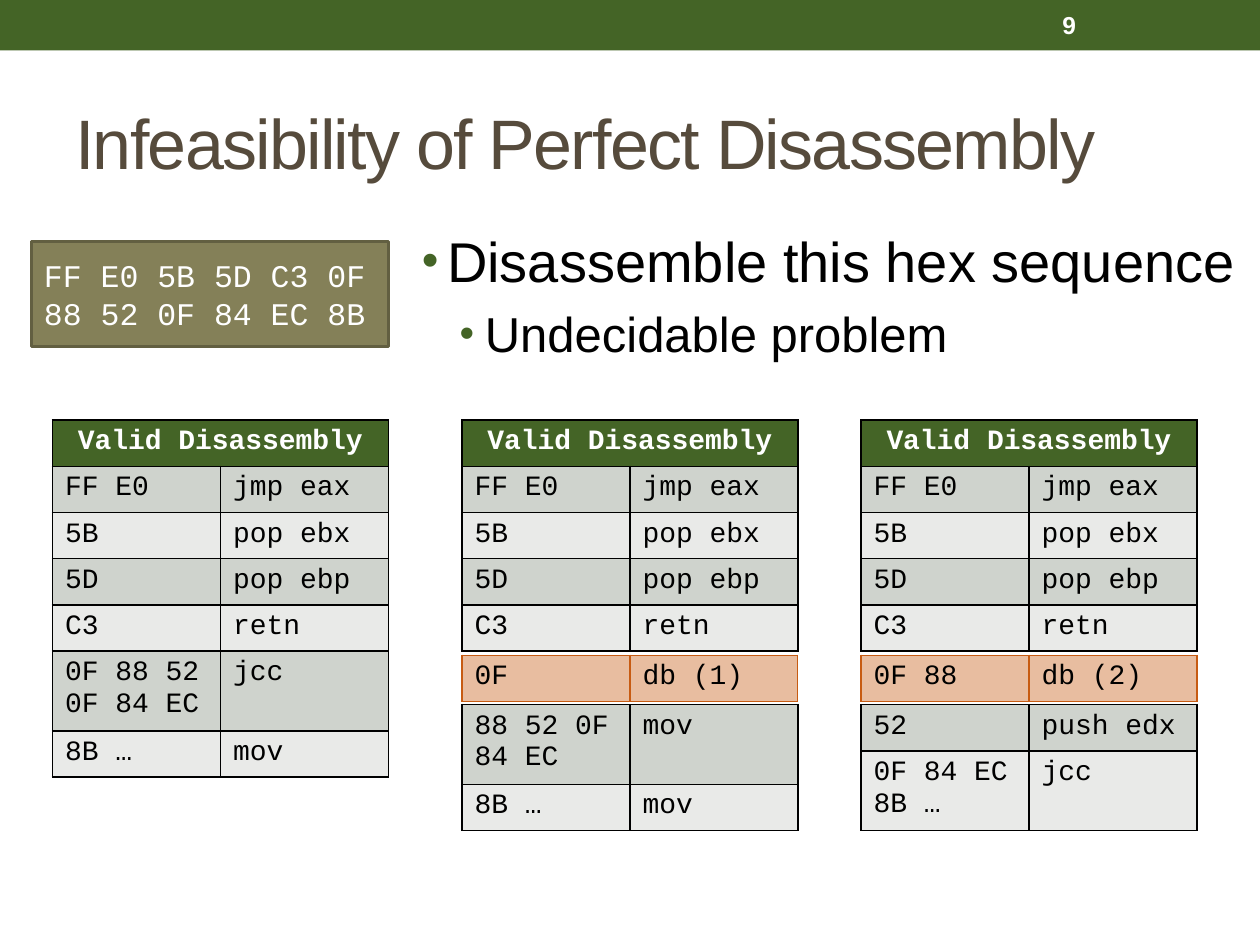
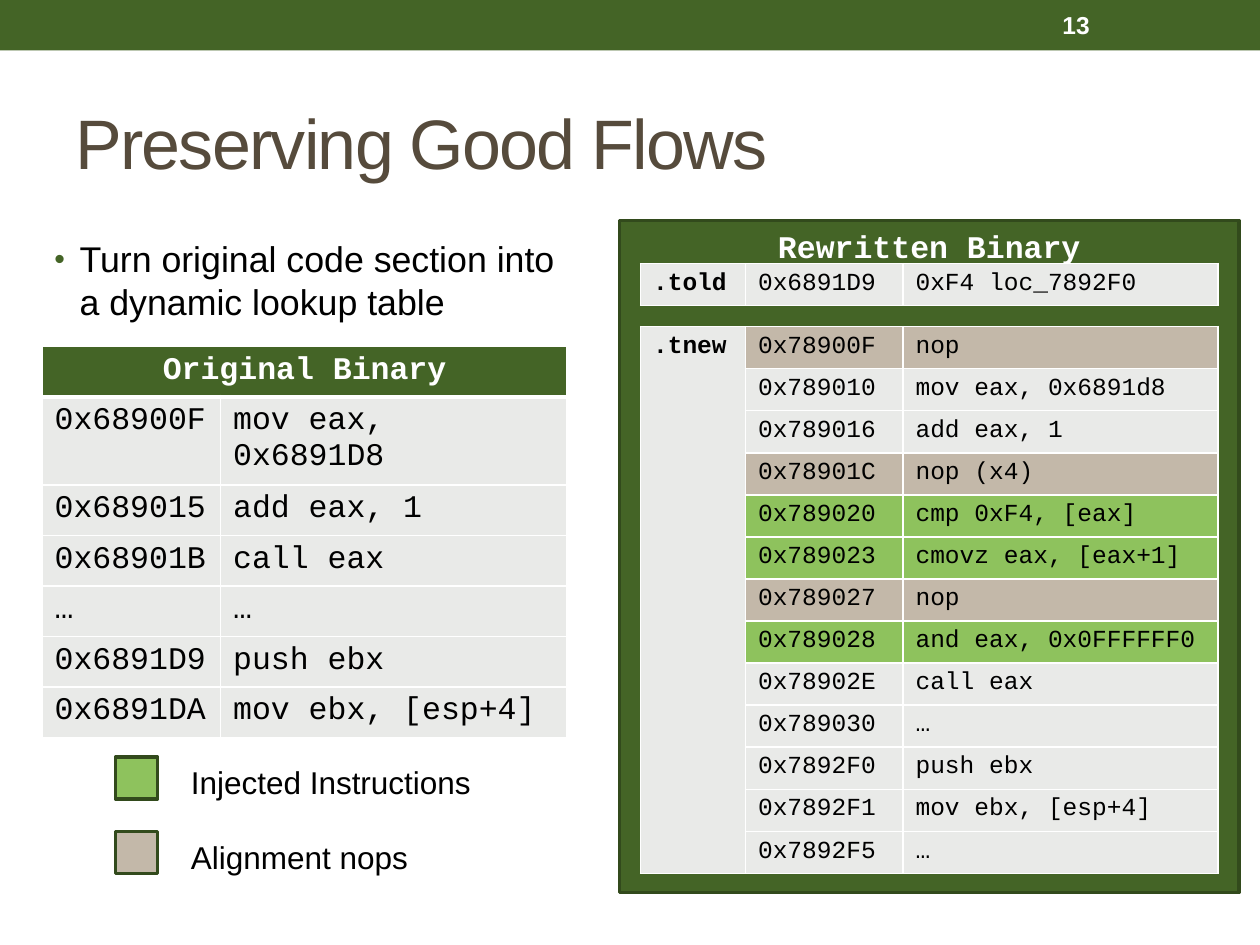
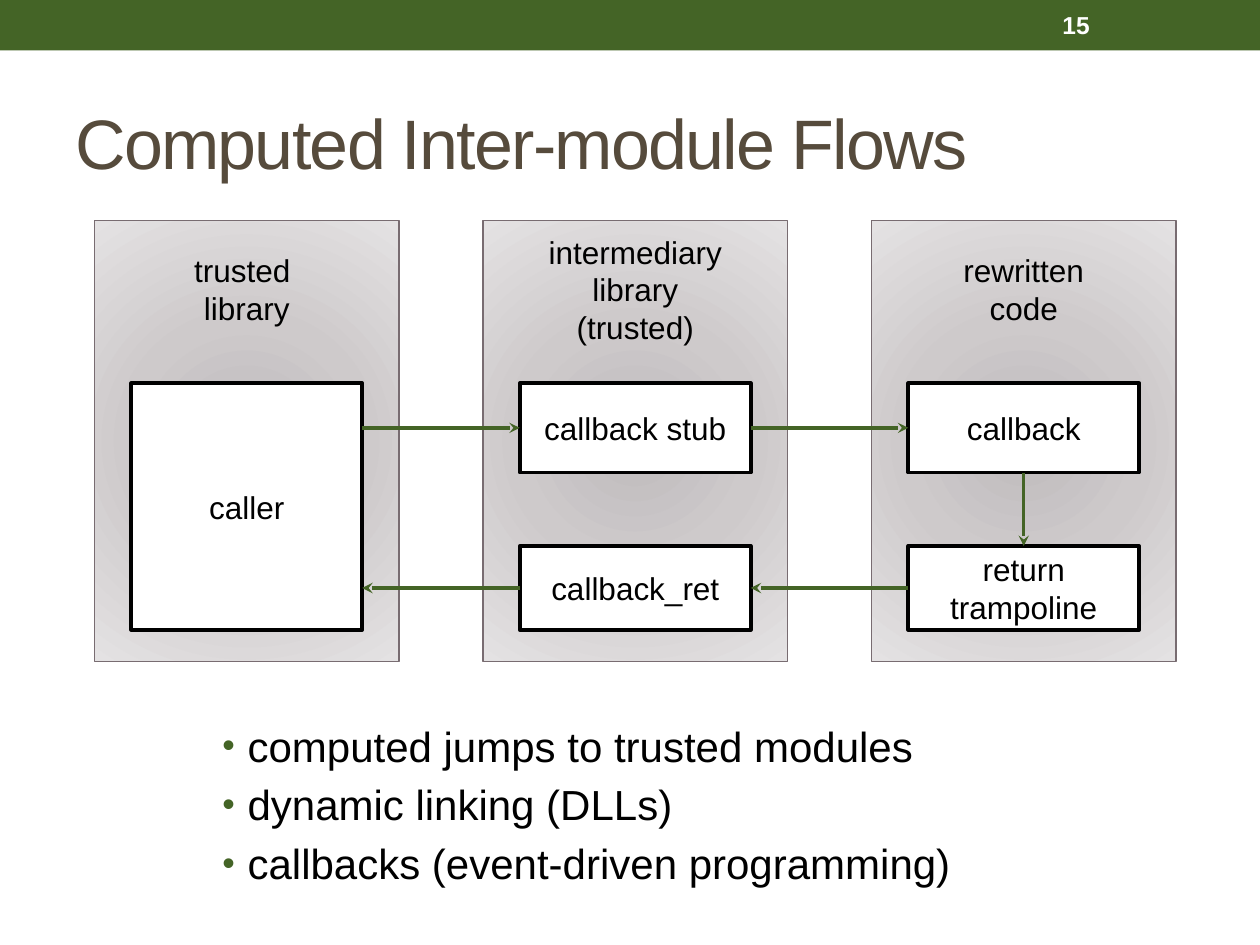
from dataclasses import dataclass

from lxml.etree import SubElement
from pptx import Presentation
from pptx.dml.color import RGBColor
from pptx.enum.shapes import MSO_CONNECTOR, MSO_SHAPE
from pptx.enum.text import MSO_ANCHOR, PP_ALIGN
from pptx.oxml import parse_xml
from pptx.oxml.ns import nsdecls, qn
from pptx.util import Inches, Pt


@dataclass(frozen=True)
class Theme:
    """Colours, fonts and type sizes shared by the slides."""

    green: str = "446426"
    dark_green: str = "324A1C"
    brown: str = "564B3C"
    olive: str = "848058"
    dark_olive: str = "625F41"
    orange: str = "C75B12"
    injected: str = "8EC25D"
    alignment: str = "C3B8A9"
    band_dark: str = "CFD3CD"
    band_light: str = "E9EAE8"
    panel_line: str = "786C71"
    panel_stops: tuple = ((0, "BEBABC"), (45, "CECACB"), (100, "E4E2E3"))
    white: str = "FFFFFF"
    black: str = "000000"
    sans: str = "Arial"
    mono: str = "Courier New"
    title_size: float = 40
    label_size: float = 18
    number_size: float = 14
    outline: float = 2.08
    thin: float = 0.75


@dataclass(frozen=True)
class TableStyle:
    """Type size, borders, row height and fill opacity of a table."""

    size: float
    border: str
    border_width: float = 1
    row_height: float = 3
    header_rule: float = 1
    opacity: int = 100


THEME = Theme()
DISASSEMBLY = TableStyle(16, THEME.black, row_height=3.1)
DATA_BYTE = TableStyle(16, THEME.orange, THEME.thin, 3.1, opacity=40)
ORIGINAL = TableStyle(18, THEME.white, row_height=4, header_rule=3)
REWRITTEN = TableStyle(14, THEME.white)


class Deck:
    """Draws elements on the current slide, on a grid of 120 columns by 90 rows."""

    def __init__(self, theme):
        """Start an empty presentation."""
        self.theme = theme
        self.presentation = Presentation()
        self.presentation.slide_width = Inches(10)
        self.presentation.slide_height = Inches(7.5)
        self.slide = None

    def across(self, columns):
        """Turn columns into a length."""
        return round(self.presentation.slide_width * columns / 120)

    def down(self, rows):
        """Turn rows into a length."""
        return round(self.presentation.slide_height * rows / 90)

    def place(self, column, row, width, height):
        """Turn a grid area into left, top, width and height."""
        return self.across(column), self.down(row), self.across(width), self.down(height)

    def new_slide(self, title, number):
        """Add a slide with its band, title and number."""
        theme = self.theme
        self.slide = self.presentation.slides.add_slide(self.presentation.slide_layouts[6])
        self.box((0, 0, 120, 4.8), theme.green)
        heading = self.text((6, 7, 108, 13), title, theme.title_size, theme.brown, anchor=MSO_ANCHOR.MIDDLE)
        heading.text_frame.paragraphs[0].runs[0].font._element.set("spc", "-100")
        self.text((100, 0.24, 14, 4.32), number, theme.number_size, theme.white, True, anchor=MSO_ANCHOR.MIDDLE)

    def style(self, paragraph, size, color, bold=False, font=None, align=PP_ALIGN.LEFT):
        """Set the font and alignment of a paragraph."""
        paragraph.alignment = align
        paragraph.font.name = font or self.theme.sans
        paragraph.font.size = Pt(size)
        paragraph.font.bold = bold
        paragraph.font.color.rgb = RGBColor.from_string(color)

    def fill_frame(self, frame, text, *style, anchor=MSO_ANCHOR.TOP):
        """Fill a text frame with one paragraph for each line."""
        frame.word_wrap = True
        frame.vertical_anchor = anchor
        frame.text = text
        for paragraph in frame.paragraphs:
            self.style(paragraph, *style)

    def text(self, area, text, size, color, bold=False, anchor=MSO_ANCHOR.TOP):
        """Add a text box."""
        shape = self.slide.shapes.add_textbox(*self.place(*area))
        self.fill_frame(shape.text_frame, text, size, color, bold, anchor=anchor)
        return shape

    def box(self, area, fill, line=None, width=None):
        """Add a rectangle."""
        shape = self.slide.shapes.add_shape(MSO_SHAPE.RECTANGLE, *self.place(*area))
        shape.shadow.inherit = False
        shape.fill.solid()
        shape.fill.fore_color.rgb = RGBColor.from_string(fill)
        if line:
            shape.line.color.rgb = RGBColor.from_string(line)
            shape.line.width = Pt(width or self.theme.outline)
        else:
            shape.line.fill.background()
        return shape

    def node(self, area, text):
        """Add a white box with a centred label."""
        theme = self.theme
        shape = self.box(area, theme.white, theme.black)
        self.fill_frame(shape.text_frame, text, theme.label_size, theme.black, False, theme.sans,
                        PP_ALIGN.CENTER, anchor=MSO_ANCHOR.MIDDLE)
        return shape

    def module_panel(self, area, text):
        """Add a panel with a radial gradient and a label near its top."""
        theme = self.theme
        shape = self.box(area, theme.white, theme.panel_line, theme.thin)
        stops = "".join(f'<a:gs pos="{position * 1000}"><a:srgbClr val="{color}"/></a:gs>'
                        for position, color in theme.panel_stops)
        gradient = parse_xml(
            f'<a:gradFill {nsdecls("a")} rotWithShape="1"><a:gsLst>{stops}</a:gsLst><a:path path="circle">'
            '<a:fillToRect l="100000" t="100000" r="100000" b="100000"/></a:path></a:gradFill>')
        properties = shape._element.spPr
        properties.replace(properties.find(qn("a:solidFill")), gradient)
        shape.text_frame.margin_bottom = self.down(29.5)
        self.fill_frame(shape.text_frame, text, theme.label_size, theme.black, False, theme.sans,
                        PP_ALIGN.CENTER, anchor=MSO_ANCHOR.MIDDLE)

    def bullets(self, area, items):
        """Add bulleted lines given as text, size and level."""
        frame = self.slide.shapes.add_textbox(*self.place(*area)).text_frame
        self.fill_frame(frame, "\n".join(text for text, _, _ in items), self.theme.label_size, self.theme.black)
        for paragraph, (_, size, level) in zip(frame.paragraphs, items):
            paragraph.font.size = Pt(size)
            paragraph.level = level
            paragraph.space_before = Pt(0.2 * size)
            properties = paragraph._p.get_or_add_pPr()
            properties.set("marL", str(Inches(0.2 + 0.3 * level)))
            properties.set("indent", str(Inches(-0.2)))
            definition = parse_xml(
                f'<a:pPr {nsdecls("a")}><a:buClr><a:srgbClr val="{self.theme.green}"/></a:buClr>'
                '<a:buSzPct val="85000"/><a:buFont typeface="Arial"/><a:buChar char="•"/></a:pPr>')
            position = properties.index(properties.find(qn("a:spcBef"))) + 1
            properties[position:position] = list(definition)

    def arrow(self, start, end, source=None, target=None):
        """Add an arrow, joined to a (shape, side) pair where one is given."""
        connector = self.slide.shapes.add_connector(
            MSO_CONNECTOR.STRAIGHT, self.across(start[0]), self.down(start[1]),
            self.across(end[0]), self.down(end[1]))
        if source:
            connector.begin_connect(*source)
        if target:
            connector.end_connect(*target)
        connector.line.color.rgb = RGBColor.from_string(self.theme.green)
        connector.line.width = Pt(2)
        SubElement(connector.line._get_or_add_ln(), qn("a:tailEnd"), type="stealth")
        SubElement(connector._element.spPr, qn("a:effectLst"))

    def cell(self, cell, text, fill, style, color=None, bold=False, align=PP_ALIGN.LEFT, rule=None):
        """Label, fill and frame one table cell."""
        cell.text = text
        for paragraph in cell.text_frame.paragraphs:
            self.style(paragraph, style.size, color or self.theme.black, bold, self.theme.mono, align)
        cell.fill.solid()
        cell.fill.fore_color.rgb = RGBColor.from_string(fill)
        properties = cell._tc.get_or_add_tcPr()
        if style.opacity < 100:
            SubElement(properties.find(f".//{qn('a:srgbClr')}"), qn("a:alpha"), val=str(style.opacity * 1000))
        for position, side in enumerate("LRTB"):
            width = rule if rule and side == "B" else style.border_width
            properties.insert(position, parse_xml(
                f'<a:ln{side} {nsdecls("a")} w="{Pt(width)}"><a:solidFill>'
                f'<a:srgbClr val="{style.border}"/></a:solidFill></a:ln{side}>'))

    def table(self, area, widths, rows, fills, style, header=None, label=None):
        """Add a table with an optional header across the top or label down the left."""
        theme = self.theme
        top, left = int(header is not None), int(label is not None)
        column, row, height = area
        frame = self.slide.shapes.add_table(
            len(rows) + top, len(widths), *self.place(column, row, sum(widths), height))
        table = frame.table
        table.first_row = table.horz_banding = False
        for table_column, width in zip(table.columns, widths):
            table_column.width = self.across(width)
        for table_row in table.rows:
            table_row.height = self.down(style.row_height)
        frame.height = self.down(height)
        if header:
            for index in range(len(widths)):
                self.cell(table.cell(0, index), "" if index else header, theme.green, style, theme.white,
                          True, PP_ALIGN.CENTER, style.header_rule)
            table.cell(0, 0).merge(table.cell(0, len(widths) - 1))
        for row_index, (values, fill) in enumerate(zip(rows, fills), top):
            for column_index, value in enumerate(values, left):
                self.cell(table.cell(row_index, column_index), value, fill, style)
            if label:
                self.cell(table.cell(row_index, 0), "" if row_index else label, theme.band_light, style, bold=True)
        if label and len(rows) > 1:
            table.cell(0, 0).merge(table.cell(len(rows) - 1, 0))


def build_disassembly(deck):
    """Build the slide with three valid disassemblies."""
    theme = deck.theme
    deck.new_slide("Infeasibility of Perfect Disassembly", "9")
    deck.bullets((39, 21, 80, 16), [("Disassemble this hex sequence", 32, 0), ("Undecidable problem", 28, 1)])
    code = deck.box((3, 23, 34, 10), theme.olive, theme.dark_olive)
    deck.fill_frame(code.text_frame, "FF E0 5B 5D C3 0F 88 52 0F 84 EC 8B", theme.label_size, theme.white,
                    False, theme.mono, anchor=MSO_ANCHOR.MIDDLE)
    widths = (16, 16)
    bands = (theme.band_dark, theme.band_light) * 3
    common = [("FF E0", "jmp eax"), ("5B", "pop ebx"), ("5D", "pop ebp"), ("C3", "retn")]
    header = "Valid Disassembly"
    first = common + [("0F 88 52 0F 84 EC", "jcc"), ("8B …", "mov")]
    deck.table((5, 40, 34), widths, first, bands, DISASSEMBLY, header)
    variants = [
        (44, ("0F", "db (1)"), [("88 52 0F 84 EC", "mov"), ("8B …", "mov")]),
        (82, ("0F 88", "db (2)"), [("52", "push edx"), ("0F 84 EC\n8B …", "jcc")]),
    ]
    for column, data_byte, remainder in variants:
        deck.table((column, 40, 22), widths, common, bands, DISASSEMBLY, header)
        deck.table((column, 62.4, 4.4), widths, [data_byte], [theme.orange], DATA_BYTE)
        deck.table((column, 67.1, 12), widths, remainder, bands, DISASSEMBLY)


def build_good_flows(deck):
    """Build the slide that sets the original beside the rewritten binary."""
    theme = deck.theme
    deck.new_slide("Preserving Good Flows", "13")
    panel = deck.box((59, 21, 59, 64), theme.green, theme.dark_green)
    deck.fill_frame(panel.text_frame, "Rewritten Binary", theme.label_size, theme.white, True, theme.mono,
                    PP_ALIGN.CENTER)
    deck.bullets((4, 22, 50, 8), [("Turn original code section into a dynamic lookup table", 20.4, 0)])
    plain, injected, padding = theme.band_light, theme.injected, theme.alignment
    original = [
        ("0x68900F", "mov eax, 0x6891D8"), ("0x689015", "add eax, 1"), ("0x68901B", "call eax"),
        ("…", "…"), ("0x6891D9", "push ebx"), ("0x6891DA", "mov ebx, [esp+4]"),
    ]
    deck.table((4, 33, 33.6), (17, 33), original, [plain] * 6, ORIGINAL, "Original Binary")
    widths = (10, 15, 30)
    deck.table((61, 25.1, 4), widths, [("0x6891D9", "0xF4 loc_7892F0")], [plain], REWRITTEN, label=".told")
    rewritten = [
        ("0x78900F", "nop", padding),
        ("0x789010", "mov eax, 0x6891d8", plain),
        ("0x789016", "add eax, 1", plain),
        ("0x78901C", "nop (x4)", padding),
        ("0x789020", "cmp 0xF4, [eax]", injected),
        ("0x789023", "cmovz eax, [eax+1]", injected),
        ("0x789027", "nop", padding),
        ("0x789028", "and eax, 0x0FFFFFF0", injected),
        ("0x78902E", "call eax", plain),
        ("0x789030", "…", plain),
        ("0x7892F0", "push ebx", plain),
        ("0x7892F1", "mov ebx, [esp+4]", plain),
        ("0x7892F5", "…", plain),
    ]
    deck.table((61, 31.1, 52), widths, [entry[:2] for entry in rewritten], [entry[2] for entry in rewritten],
               REWRITTEN, label=".tnew")
    legend = [(72.1, "Injected Instructions", injected), (79.2, "Alignment nops", padding)]
    for row, meaning, color in legend:
        deck.box((11, row, 4, 4), color, theme.dark_green)
        deck.text((17, row, 37, 4.8), meaning, theme.label_size, theme.black)


def build_module_flows(deck):
    """Build the slide with the callback path between modules."""
    deck.new_slide("Computed Inter-module Flows", "15")
    bullets = ["computed jumps to trusted modules", "dynamic linking (DLLs)", "callbacks (event-driven programming)"]
    deck.bullets((20, 68, 94, 22), [(text, 24, 0) for text in bullets])
    modules = ["trusted \nlibrary", "intermediary\nlibrary\n(trusted)", "rewritten\ncode"]
    for index, module in enumerate(modules):
        deck.module_panel((9 + 37 * index, 21, 29, 42), module)
    width = 22
    left, middle, right = (12.5 + 37 * index for index in range(3))
    call_row, return_row = 40.75, 56
    deck.node((left, 36.5, width, 23.5), "caller")
    stub = deck.node((middle, 36.5, width, 8.5), "callback stub")
    callback_return = deck.node((middle, 52, width, 8), "callback_ret")
    callback = deck.node((right, 36.5, width, 8.5), "callback")
    trampoline = deck.node((right, 52, width, 8), "return trampoline")
    center = right + width / 2
    deck.arrow((left + width, call_row), (middle, call_row), target=(stub, 1))
    deck.arrow((middle + width, call_row), (right, call_row), (stub, 3), (callback, 1))
    deck.arrow((center, 45), (center, 52), (callback, 2), (trampoline, 0))
    deck.arrow((right, return_row), (middle + width, return_row), (trampoline, 1), (callback_return, 3))
    deck.arrow((middle, return_row), (left + width, return_row), source=(callback_return, 1))


def main():
    """Build the slides and save them."""
    deck = Deck(THEME)
    build_disassembly(deck)
    build_good_flows(deck)
    build_module_flows(deck)
    deck.presentation.save("out.pptx")


if __name__ == "__main__":
    main()
